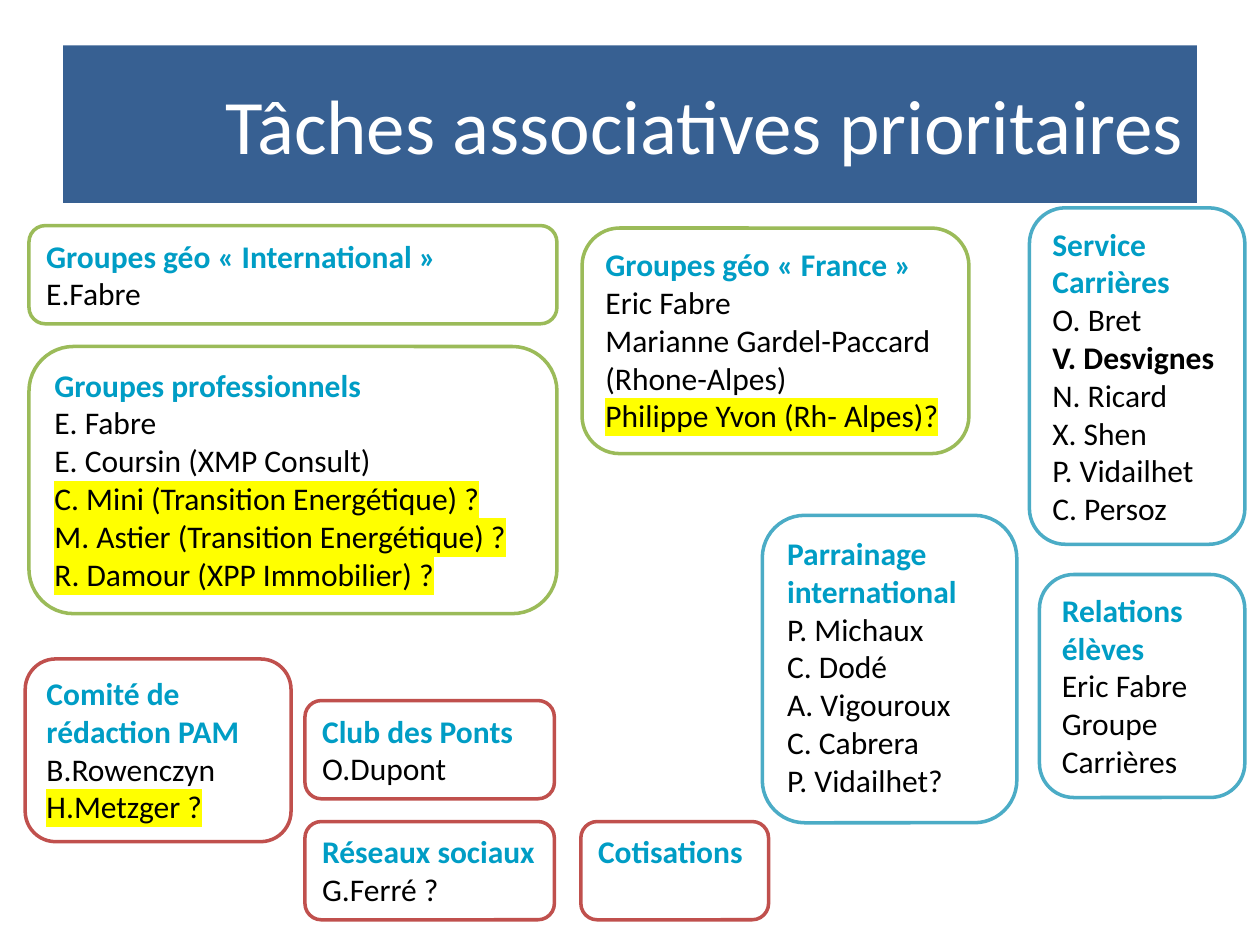
from lxml import etree
from pptx import Presentation
from pptx.dml.color import RGBColor
from pptx.enum.shapes import MSO_SHAPE
from pptx.enum.text import MSO_ANCHOR, PP_ALIGN
from pptx.oxml.ns import qn
from pptx.util import Inches, Pt

ROUNDED = MSO_SHAPE.ROUNDED_RECTANGLE
TOP, MIDDLE = MSO_ANCHOR.TOP, MSO_ANCHOR.MIDDLE
LEFT, RIGHT = PP_ALIGN.LEFT, PP_ALIGN.RIGHT
FONT = "Calibri"
GREEN, BLUE, RED = "9BBB59", "4BACC6", "C0504D"
HEADING, BLACK, WHITE = "009DC5", "000000", "FFFFFF"
BANNER, MARKER = "376092", "FFFF00"
PLAIN, BOLD, MARKED = "plain", "bold", "marked"

TITLE = "Tâches associatives prioritaires"
CARDS = [
    (GREEN, (0.23, 2.75, 4.19, 2.12), "Groupes professionnels", [
        ("E. Fabre", PLAIN),
        ("E. Coursin (XMP Consult)", PLAIN),
        ("C. Mini (Transition Energétique) ?", MARKED),
        ("M. Astier (Transition Energétique) ?", MARKED),
        ("R. Damour (XPP Immobilier) ?", MARKED),
    ]),
    (GREEN, (0.23, 1.79, 4.19, 0.78), "Groupes géo « International »", [
        ("E.Fabre", PLAIN),
    ]),
    (GREEN, (4.62, 1.81, 3.07, 1.79), "Groupes géo « France »", [
        ("Eric Fabre", PLAIN),
        ("Marianne Gardel-Paccard (Rhone-Alpes)", PLAIN),
        ("Philippe Yvon (Rh- Alpes)?", MARKED),
    ]),
    (BLUE, (8.17, 1.65, 1.71, 2.67), "Service Carrières", [
        ("O. Bret", PLAIN),
        ("V. Desvignes", BOLD),
        ("N. Ricard", PLAIN),
        ("X. Shen", PLAIN),
        ("P. Vidailhet", PLAIN),
        ("C. Persoz", PLAIN),
    ]),
    (BLUE, (8.25, 4.56, 1.63, 1.77), "Relations élèves", [
        ("Eric Fabre", PLAIN),
        ("Groupe Carrières", PLAIN),
    ]),
    (BLUE, (6.05, 4.09, 2.02, 2.44), "Parrainage international", [
        ("P. Michaux", PLAIN),
        ("C. Dodé", PLAIN),
        ("A. Vigouroux", PLAIN),
        ("C. Cabrera", PLAIN),
        ("P. Vidailhet?", PLAIN),
    ]),
    (RED, (4.61, 6.52, 1.49, 0.78), "Cotisations", []),
    (RED, (2.42, 5.56, 1.98, 0.78), "Club des Ponts", [
        ("O.Dupont", PLAIN),
    ]),
    (RED, (0.2, 5.23, 2.11, 1.45), "Comité de rédaction PAM", [
        ("B.Rowenczyn", PLAIN),
        ("H.Metzger ?", MARKED),
    ]),
    (RED, (2.42, 6.52, 1.98, 0.78), "Réseaux sociaux", [
        ("G.Ferré ?", PLAIN),
    ]),
]


def paint(target, colour):
    if hasattr(target, "solid"):
        target.solid()
        target = target.fore_color
    target.rgb = RGBColor.from_string(colour)


def highlight(span, colour):
    properties = span.font._element if hasattr(span.font, "_element") else span._r.get_or_add_rPr()
    marker = etree.SubElement(properties, qn("a:highlight"))
    etree.SubElement(marker, qn("a:srgbClr"), val=colour)


def write_line(para, text, size, colour, bold=False, align=LEFT):
    span = para.add_run()
    span.text = text
    para.alignment = align
    para.font.name = FONT
    para.font.size = Pt(size)
    para.font.bold = bold
    paint(para.font.fill, colour)
    return span


def add_banner(page, box, text):
    banner = page.shapes.title
    banner.left, banner.top, banner.width, banner.height = map(Inches, box)
    paint(banner.fill, BANNER)
    frame = banner.text_frame
    frame.vertical_anchor = MIDDLE
    write_line(frame.paragraphs[0], text, 44, WHITE, align=RIGHT)


def add_card(page, box, outline, heading, members):
    card = page.shapes.add_shape(ROUNDED, *map(Inches, box))
    card.shadow.inherit = False
    paint(card.fill, WHITE)
    paint(card.line.fill, outline)
    card.line.width = Pt(2)
    frame = card.text_frame
    frame.word_wrap = True
    frame.vertical_anchor = TOP
    write_line(frame.paragraphs[0], heading, 18, HEADING, bold=True)
    for name, style in members:
        span = write_line(frame.add_paragraph(), name, 18, BLACK, bold=style == BOLD)
        if style == MARKED:
            highlight(span, MARKER)


def main():
    deck = Presentation()
    deck.slide_width, deck.slide_height = Inches(10), Inches(7.5)
    page = deck.slides.add_slide(deck.slide_layouts.get_by_name("Title Only"))
    add_banner(page, (0.5, 0.36, 9, 1.25), TITLE)
    for outline, box, heading, members in CARDS:
        add_card(page, box, outline, heading, members)
    deck.save("out.pptx")


if __name__ == "__main__":
    main()
